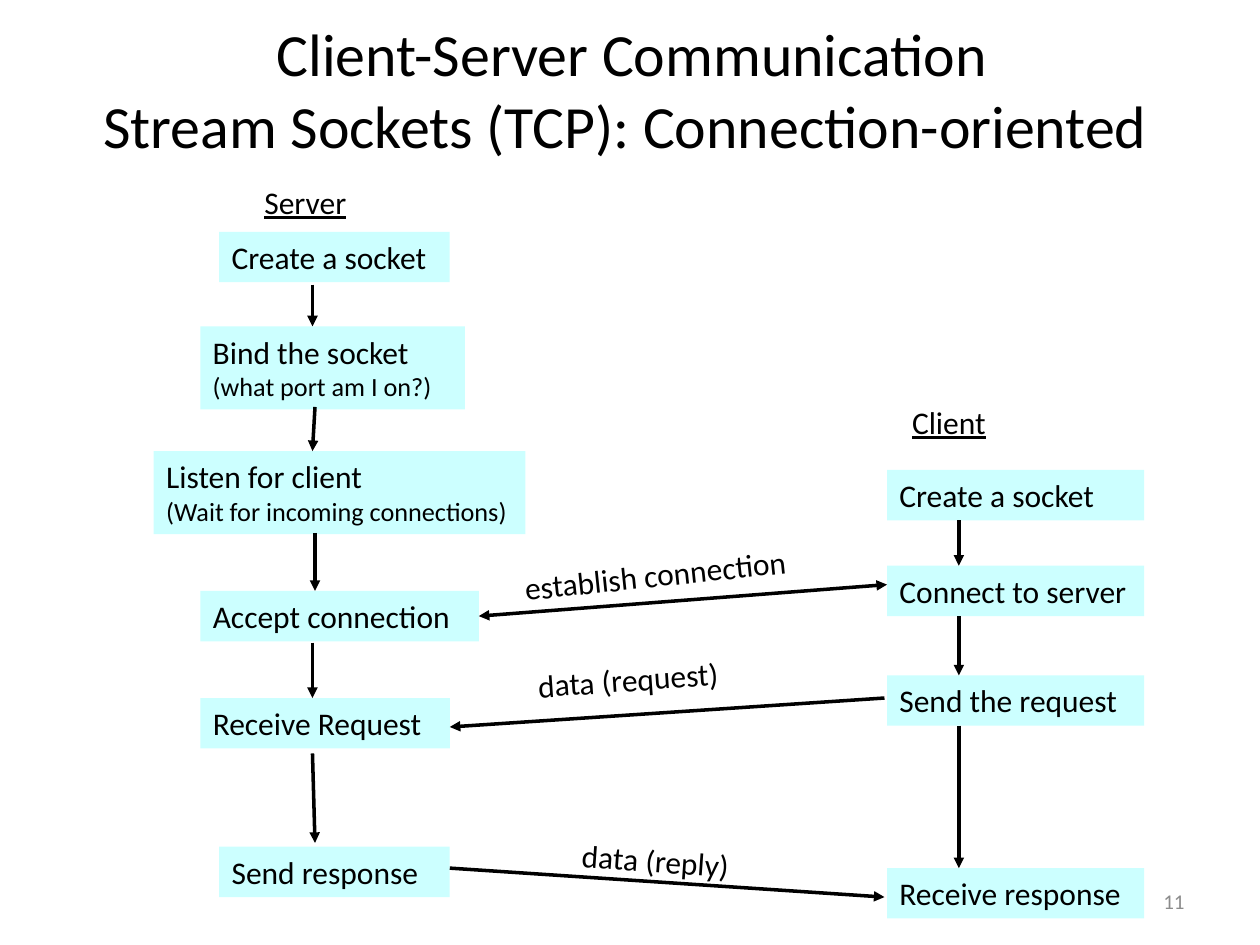
from lxml import etree
from pptx import Presentation
from pptx.dml.color import RGBColor
from pptx.enum.shapes import MSO_CONNECTOR, MSO_SHAPE
from pptx.enum.text import MSO_ANCHOR, PP_ALIGN
from pptx.oxml.ns import qn
from pptx.util import Emu, Pt

RECTANGLE = MSO_SHAPE.RECTANGLE
STRAIGHT = MSO_CONNECTOR.STRAIGHT
TOP, MIDDLE = MSO_ANCHOR.TOP, MSO_ANCHOR.MIDDLE
LEFT, CENTER, RIGHT = PP_ALIGN.LEFT, PP_ALIGN.CENTER, PP_ALIGN.RIGHT

PX_PER_INCH = 100
COLORS = {"text": "000000", "line": "000000", "step": "CCFFFF", "number": "8C8C8C"}
FONT = "Calibri"
STEP_SIZE, NOTE_SIZE = 18, 15
SINGLE, DOUBLE = 40, 66


def px(length):
    return Emu(length * 914400 // PX_PER_INCH)


def color(name):
    return RGBColor.from_string(COLORS[name])


def place(box, left, top, width, height):
    return [px(n) for n in (box[0] + left, box[1] + top, width, height)]


def style_paragraph(para, size, align=LEFT, tone="text"):
    para.alignment = align
    para.font.name = FONT
    para.font.size = Pt(size)
    para.font.color.rgb = color(tone)


def add_label(page, area, text, size=STEP_SIZE, align=LEFT, tone="text", anchor=TOP):
    label = page.shapes.add_textbox(*area)
    frame = label.text_frame
    frame.word_wrap = True
    frame.vertical_anchor = anchor
    para = frame.paragraphs[0]
    para.text = text
    style_paragraph(para, size, align, tone)
    return label


def add_heading(page, area, text):
    heading = add_label(page, area, text)
    heading.text_frame.paragraphs[0].font.underline = True


def add_step(page, area, text):
    step = page.shapes.add_shape(RECTANGLE, *area)
    step.shadow.inherit = False
    step.fill.solid()
    step.fill.fore_color.rgb = color("step")
    step.line.fill.background()
    frame = step.text_frame
    frame.word_wrap = True
    frame.vertical_anchor = TOP
    frame.text = text
    for index, para in enumerate(frame.paragraphs):
        style_paragraph(para, NOTE_SIZE if index else STEP_SIZE)


def add_arrow(page, box, start, end, both_ways=False):
    points = [px(n) for n in (box[0] + start[0], box[1] + start[1],
                              box[0] + end[0], box[1] + end[1])]
    arrow = page.shapes.add_connector(STRAIGHT, *points)
    arrow.line.color.rgb = color("line")
    arrow.line.width = Pt(2)
    outline = arrow.line._get_or_add_ln()
    for tag in ["a:headEnd"] * both_ways + ["a:tailEnd"]:
        etree.SubElement(outline, qn(tag), type="triangle")
    etree.SubElement(arrow._element.spPr, qn("a:effectLst"))


def add_title(page, box):
    title = page.shapes.title
    title.left, title.top, title.width, title.height = place(box, 0, 0, *box[2:])
    frame = title.text_frame
    frame.vertical_anchor = MIDDLE
    frame.text = "Client-Server Communication\vStream Sockets (TCP): Connection-oriented "
    style_paragraph(frame.paragraphs[0], 34.2, CENTER)


def add_server(page, box):
    add_heading(page, place(box, 78, 0, 120, 43), "Server")
    steps = [
        (52, 44, 183, SINGLE, "Create a socket"),
        (37, 119, 210, DOUBLE, "Bind the socket\n(what port am I on?)"),
        (0, 218, 295, DOUBLE, "Listen for client\n(Wait for incoming connections)"),
        (37, 329, 221, SINGLE, "Accept connection"),
        (37, 414, 198, SINGLE, "Receive Request"),
        (52, 532, 183, SINGLE, "Send response"),
    ]
    for *area, text in steps:
        add_step(page, place(box, *area), text)
    arrows = [
        ((126, 86), (126, 119)),
        ((128, 183), (126, 218)),
        ((128, 283), (128, 329)),
        ((126, 370), (126, 414)),
        ((126, 458), (128, 529)),
    ]
    for start, end in arrows:
        add_arrow(page, box, start, end)


def add_client(page, box):
    add_heading(page, place(box, 10, 0, 120, 43), "Client")
    steps = [
        (58, "Create a socket"),
        (134, "Connect to server"),
        (221, "Send the request"),
        (374, "Receive response"),
    ]
    for top, text in steps:
        add_step(page, place(box, 0, top, box[2], SINGLE), text)
    for (top, _), (next_top, _) in zip(steps, steps[1:]):
        add_arrow(page, box, (57, top + SINGLE), (57, next_top))


def add_messages(page, box):
    messages = [
        ("establish connection", (49, 0, 250, 40), -6, (347, 29), (23, 54), True),
        ("data (request)", (60, 84, 166, 40), -4, (345, 119), (0, 142), False),
        ("data (reply)", (95, 228, 139, 40), 4.1, (0, 254), (345, 277), False),
    ]
    for text, area, angle, start, end, both_ways in messages:
        add_arrow(page, box, start, end, both_ways)
        label = add_label(page, place(box, *area), text)
        label.text_frame.margin_right = 0
        label.rotation = angle


def add_page_number(page, box):
    add_label(page, place(box, 0, 0, *box[2:]), "11", 12, RIGHT, "number", MIDDLE)


def main():
    deck = Presentation()
    deck.slide_width, deck.slide_height = px(1000), px(750)
    page = deck.slides.add_slide(deck.slide_layouts.get_by_name("Title Only"))
    add_title(page, (18, 8, 967, 125))
    add_server(page, (122, 140, 295, 572))
    add_client(page, (704, 315, 204, 414))
    add_messages(page, (357, 435, 347, 277))
    add_page_number(page, (717, 695, 233, 40))
    deck.save("out.pptx")


if __name__ == "__main__":
    main()
